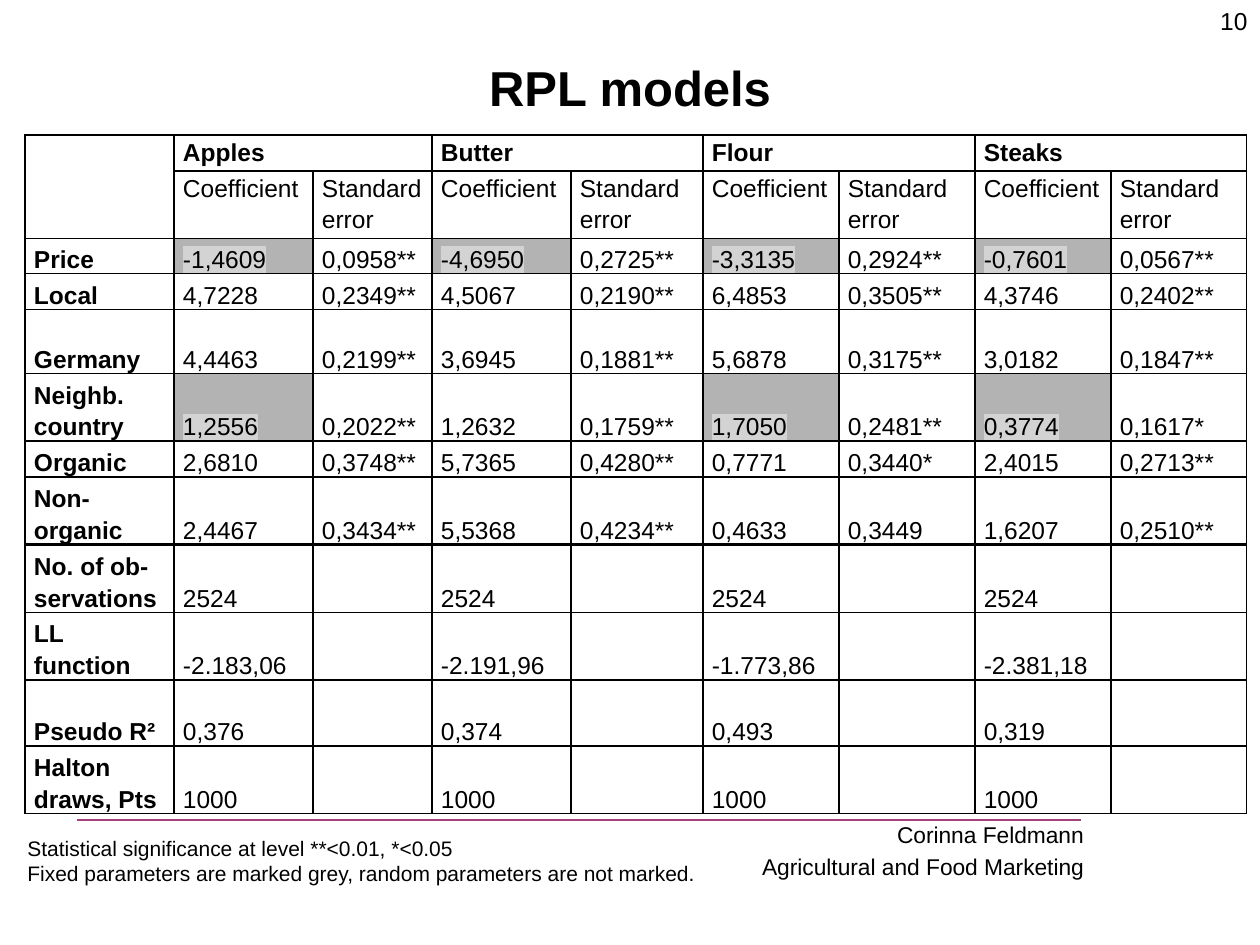
from dataclasses import dataclass

from lxml import etree
from pptx import Presentation
from pptx.dml.color import RGBColor
from pptx.enum.shapes import MSO_CONNECTOR
from pptx.enum.text import MSO_ANCHOR, PP_ALIGN
from pptx.oxml.ns import qn
from pptx.util import Pt

PX = 914400 // 126
STRAIGHT = MSO_CONNECTOR.STRAIGHT
TOP, MIDDLE, BOTTOM = MSO_ANCHOR.TOP, MSO_ANCHOR.MIDDLE, MSO_ANCHOR.BOTTOM
LEFT, CENTER, RIGHT = PP_ALIGN.LEFT, PP_ALIGN.CENTER, PP_ALIGN.RIGHT


@dataclass(frozen=True)
class Theme:
    font: str = "Arial"
    text: str = "000000"
    rule: str = "A4427A"
    fixed_fill: str = "B3B3B3"
    highlight: str = "D3D3D3"
    title_size: int = 28
    table_size: int = 14
    author_size: int = 13
    note_size: int = 12
    border: float = 1
    thick_border: float = 2.25


THEME = Theme()

PRODUCTS = ["Apples", "Butter", "Flour", "Steaks"]
MEASURES = ["Coefficient", "Standard error"]
COLUMN_WIDTHS = [149, 139, 119, 139, 132, 136, 136, 136, 136]
HEADER_HEIGHTS = [36, 66]

# Label, row height, coefficients, standard errors, products with a fixed parameter
PARAMETERS = [
    ("Price", 35, "-1,4609 -4,6950 -3,3135 -0,7601",
     "0,0958** 0,2725** 0,2924** 0,0567**", PRODUCTS),
    ("Local", 36, "4,7228 4,5067 6,4853 4,3746",
     "0,2349** 0,2190** 0,3505** 0,2402**", []),
    ("Germany", 64, "4,4463 3,6945 5,6878 3,0182",
     "0,2199** 0,1881** 0,3175** 0,1847**", []),
    ("Neighb. country", 65, "1,2556 1,2632 1,7050 0,3774",
     "0,2022** 0,1759** 0,2481** 0,1617*", ["Apples", "Flour", "Steaks"]),
    ("Organic", 36, "2,6810 5,7365 0,7771 2,4015",
     "0,3748** 0,4280** 0,3440* 0,2713**", []),
    ("Non-organic", 65, "2,4467 5,5368 0,4633 1,6207",
     "0,3434** 0,4234** 0,3449 0,2510**", []),
]
# Label, row height, value for each product
MODEL_STATISTICS = [
    ("No. of ob-servations", 65, "2524 2524 2524 2524"),
    ("LL function", 65, "-2.183,06 -2.191,96 -1.773,86 -2.381,18"),
    ("Pseudo R²", 66, "0,376 0,374 0,493 0,319"),
    ("Halton draws, Pts", 63, "1000 1000 1000 1000"),
]


def style(paragraph, size, bold=False, align=LEFT):
    paragraph.alignment = align
    font = paragraph.font
    font.name = THEME.font
    font.size = Pt(size)
    font.bold = bold
    font.color.rgb = RGBColor.from_string(THEME.text)


def add_color(parent, tag, color):
    holder = etree.SubElement(parent, qn(tag))
    etree.SubElement(holder, qn("a:srgbClr"), val=color)


def add_text(slide, box, lines, size, align=LEFT, gap=0):
    frame = slide.shapes.add_textbox(*(v * PX for v in box)).text_frame
    frame.word_wrap = True
    for index, line in enumerate(lines):
        paragraph = frame.add_paragraph() if index else frame.paragraphs[0]
        paragraph.text = line
        style(paragraph, size, align=align)
        if index and gap:
            paragraph.space_before = Pt(gap)


def add_title(slide, box, text):
    title = slide.shapes.title
    title.left, title.top, title.width, title.height = (v * PX for v in box)
    title.text_frame.text = text
    title.text_frame.vertical_anchor = MIDDLE
    style(title.text_frame.paragraphs[0], THEME.title_size, True, CENTER)


def set_borders(cell, top, bottom):
    properties = cell._tc.get_or_add_tcPr()
    sides = {"L": THEME.border, "R": THEME.border, "T": top, "B": bottom}
    for side, width in sides.items():
        line = etree.SubElement(properties, qn("a:ln" + side), w=str(Pt(width)))
        add_color(line, "a:solidFill", THEME.text)


def fill_cell(cell, text, bold=False, anchor=BOTTOM, fixed=False):
    """Write one cell; a fixed parameter gets a grey fill and a highlight."""
    cell.margin_left = cell.margin_right = 9 * PX
    cell.margin_top = cell.margin_bottom = 0
    cell.vertical_anchor = anchor
    paragraph = cell.text_frame.paragraphs[0]
    paragraph.text = text
    paragraph.line_spacing = 1.15
    style(paragraph, THEME.table_size, bold)
    if fixed:
        cell.fill.solid()
        cell.fill.fore_color.rgb = RGBColor.from_string(THEME.fixed_fill)
        run_properties = paragraph.runs[0]._r.get_or_add_rPr()
        add_color(run_properties, "a:highlight", THEME.highlight)
    else:
        cell.fill.background()


def add_model_table(slide, left, top):
    heights = HEADER_HEIGHTS + [row[1] for row in PARAMETERS + MODEL_STATISTICS]
    table = slide.shapes.add_table(
        len(heights), len(COLUMN_WIDTHS), left * PX, top * PX,
        sum(COLUMN_WIDTHS) * PX, sum(heights) * PX).table
    table.first_row = table.horz_banding = False
    for column, width in zip(table.columns, COLUMN_WIDTHS):
        column.width = width * PX
    for row, height in zip(table.rows, heights):
        row.height = height * PX

    first_parameter = len(HEADER_HEIGHTS)
    first_statistic = first_parameter + len(PARAMETERS)
    for row_index, row in enumerate(table.rows):
        above = THEME.thick_border if row_index == first_statistic else THEME.border
        below = THEME.thick_border if row_index == first_statistic - 1 else THEME.border
        for cell in row.cells:
            set_borders(cell, above, below)
            fill_cell(cell, "")

    table.cell(0, 0).merge(table.cell(1, 0))
    for index, product in enumerate(PRODUCTS):
        column = 1 + 2 * index
        table.cell(0, column).merge(table.cell(0, column + 1))
        fill_cell(table.cell(0, column), product, True, TOP)
        for offset, measure in enumerate(MEASURES):
            fill_cell(table.cell(1, column + offset), measure, anchor=TOP)

    for row, (label, _, coefficients, errors, fixed) in enumerate(
            PARAMETERS, first_parameter):
        fill_cell(table.cell(row, 0), label, True)
        values = zip(PRODUCTS, coefficients.split(), errors.split())
        for index, (product, coefficient, error) in enumerate(values):
            column = 1 + 2 * index
            fill_cell(table.cell(row, column), coefficient, fixed=product in fixed)
            fill_cell(table.cell(row, column + 1), error)

    for row, (label, _, values) in enumerate(MODEL_STATISTICS, first_statistic):
        fill_cell(table.cell(row, 0), label, True)
        for index, value in enumerate(values.split()):
            fill_cell(table.cell(row, 1 + 2 * index), value)


def add_footer(slide, left, top, width):
    """Place the rule with the author lines below its right end."""
    rule = slide.shapes.add_connector(
        STRAIGHT, (left + width) * PX, top * PX, left * PX, top * PX)
    rule.line.color.rgb = RGBColor.from_string(THEME.rule)
    rule.line.width = Pt(0.75)
    etree.SubElement(rule._element.spPr, qn("a:effectLst"))
    add_text(slide, (left + width - 510, top - 5, 525, 83),
             ["Corinna Feldmann", "Agricultural and Food Marketing"],
             THEME.author_size, RIGHT, gap=2.6)


def main():
    presentation = Presentation()
    presentation.slide_width = 1260 * PX
    presentation.slide_height = 945 * PX
    slide = presentation.slides.add_slide(presentation.slide_layouts[5])
    add_footer(slide, 77, 820, 1004)
    add_title(slide, (63, 38, 1134, 97), "RPL models")
    add_text(slide, (1196, 0, 64, 65), ["10"], THEME.table_size, RIGHT)
    add_model_table(slide, 25, 135)
    add_text(slide, (15, 829, 704, 64),
             ["Statistical significance at level **<0.01, *<0.05",
              "Fixed parameters are marked grey, random parameters are not marked."],
             THEME.note_size)
    presentation.save("out.pptx")


if __name__ == "__main__":
    main()
